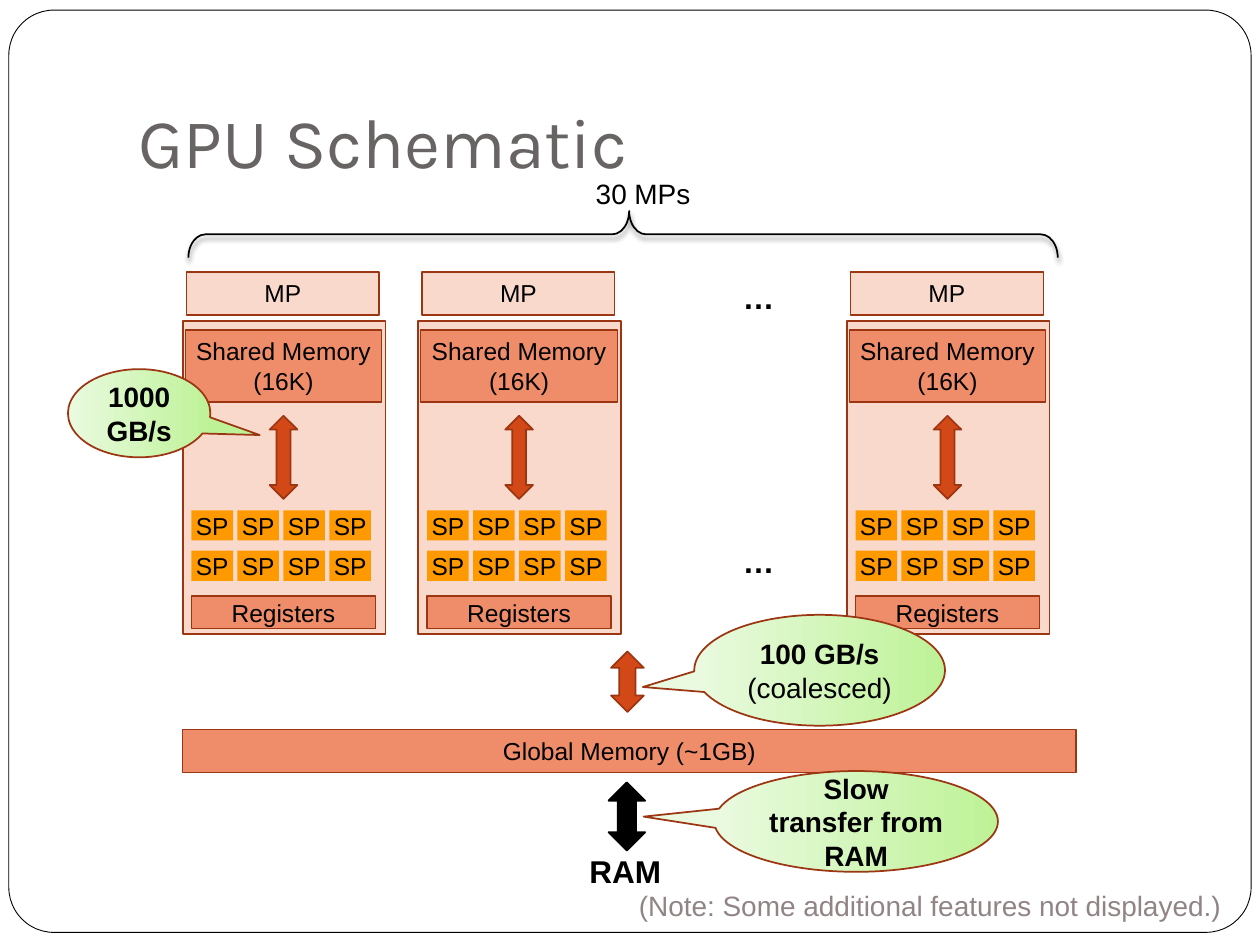
from lxml import etree
from pptx import Presentation
from pptx.dml.color import RGBColor
from pptx.enum.shapes import MSO_SHAPE
from pptx.enum.text import MSO_ANCHOR, PP_ALIGN
from pptx.oxml import parse_xml
from pptx.util import Inches, Pt

RECT = MSO_SHAPE.RECTANGLE
ROUNDED = MSO_SHAPE.ROUNDED_RECTANGLE
ARROW = MSO_SHAPE.UP_DOWN_ARROW
BRACE = MSO_SHAPE.LEFT_BRACE
CALLOUT = MSO_SHAPE.OVAL_CALLOUT
TOP, MIDDLE, BOTTOM = MSO_ANCHOR.TOP, MSO_ANCHOR.MIDDLE, MSO_ANCHOR.BOTTOM
LEFT, CENTER, RIGHT = PP_ALIGN.LEFT, PP_ALIGN.CENTER, PP_ALIGN.RIGHT

BLACK = RGBColor(0x00, 0x00, 0x00)
WHITE = RGBColor(0xFF, 0xFF, 0xFF)
TITLE_GRAY = RGBColor(0x69, 0x64, 0x64)
NOTE_GRAY = RGBColor(0x91, 0x84, 0x85)
PALE = RGBColor(0xFA, 0xD9, 0xCD)
SALMON = RGBColor(0xEF, 0x8C, 0x6A)
ORANGE = RGBColor(0xFF, 0x99, 0x00)
RUST = RGBColor(0xD3, 0x48, 0x17)
BROWN = RGBColor(0x9C, 0x35, 0x11)
GREEN = RGBColor(0xBE, 0xF2, 0x97)
LIGHT_GREEN = RGBColor(0xEA, 0xFA, 0xE0)

prs = Presentation()
prs.slide_width, prs.slide_height = Inches(10), Inches(7.5)
slide = prs.slides.add_slide(prs.slide_layouts[6])


def draw(kind, x, y, w, h, fill=None, line=BROWN, weight=1):
    shape = slide.shapes.add_shape(kind, Inches(x), Inches(y), Inches(w), Inches(h))
    shape.shadow.inherit = False
    if fill is None:
        shape.fill.background()
    else:
        shape.fill.solid()
        shape.fill.fore_color.rgb = fill
    if line is None:
        shape.line.fill.background()
    else:
        shape.line.color.rgb = line
        shape.line.width = Pt(weight)
    return shape


def write(shape, lines, size=14, color=BLACK, font="Arial", bold=False,
          align=CENTER, anchor=TOP, side=0.1, top=0.05, bottom=0.05):
    frame = shape.text_frame
    frame.word_wrap = True
    frame.vertical_anchor = anchor
    frame.margin_left = frame.margin_right = Inches(side)
    frame.margin_top, frame.margin_bottom = Inches(top), Inches(bottom)
    for i, text in enumerate(lines):
        paragraph = frame.add_paragraph() if i else frame.paragraphs[0]
        paragraph.alignment = align
        for j, part in enumerate(text.split("\n")):
            if j:
                paragraph.add_line_break()
            run = paragraph.add_run()
            run.text = part
            run.font.name = font
            run.font.size = Pt(size)
            run.font.bold = bold
            run.font.color.rgb = color


slide_frame = draw(ROUNDED, 0.07, 0.08, 9.86, 7.32, WHITE, BLACK, 0.5)
slide_frame.adjustments[0] = 0.049

labels = [
    (1, 0.3, 8.5, 1.25, "GPU Schematic",
     dict(size=40, color=TITLE_GRAY, font="Karla", align=LEFT, anchor=BOTTOM, bottom=0.1)),
    (0.55, 7, 9.24, 0.37, "(Note: Some additional features not displayed.)",
     dict(size=16, color=NOTE_GRAY, align=RIGHT)),
    (5.18, 2.16, 1.68, 0.4, "…", dict(size=18, bold=True)),
    (5.18, 4.25, 1.68, 0.4, "…", dict(size=18, bold=True)),
    (4.63, 1.35, 1.1, 0.37, "30 MPs", dict(size=16, align=LEFT)),
    (4.58, 6.71, 1.38, 0.4, "RAM", dict(size=18, bold=True, align=LEFT)),
]
for x, y, w, h, text, style in labels:
    label = slide.shapes.add_textbox(Inches(x), Inches(y), Inches(w), Inches(h))
    write(label, [text], **style)

for x in (1.45, 3.32, 6.72):
    write(draw(RECT, x + 0.03, 2.16, 1.53, 0.34, PALE, weight=0.75), ["MP"])
    draw(RECT, x, 2.55, 1.61, 2.48, PALE)
    shared_memory = draw(RECT, x + 0.02, 2.62, 1.56, 0.57, SALMON, weight=0.75)
    write(shared_memory, ["Shared Memory", "(16K)"], side=0)
    draw(ARROW, x + 0.69, 3.3, 0.22, 0.66, RUST)
    for y in (4.05, 4.37):
        for column in range(4):
            processor = draw(RECT, x + 0.07 + column * 0.365, y, 0.33, 0.24, ORANGE, None)
            write(processor, ["SP"], anchor=MIDDLE, side=0, top=0, bottom=0)
    write(draw(RECT, x + 0.07, 4.73, 1.46, 0.26, SALMON), ["Registers"], anchor=MIDDLE)

global_memory = draw(RECT, 1.45, 5.79, 7.09, 0.34, SALMON, weight=0.75)
write(global_memory, ["Global Memory (~1GB)"])
draw(ARROW, 4.85, 5.17, 0.26, 0.48, RUST)
draw(ARROW, 4.83, 6.21, 0.29, 0.54, BLACK, BLACK)

mp_brace = draw(BRACE, 4.76, -1.59, 0.37, 6.9, line=BLACK)
mp_brace.rotation = 90
mp_brace.adjustments[0], mp_brace.adjustments[1] = 0.364, 0.493
shadow = parse_xml(
    '<a:outerShdw xmlns:a="http://schemas.openxmlformats.org/drawingml/2006/main" '
    'blurRad="38100" dist="25400" dir="5400000" rotWithShape="0">'
    '<a:srgbClr val="000000"><a:alpha val="50000"/></a:srgbClr></a:outerShdw>')
effects = mp_brace.element.spPr.find(etree.QName(shadow.nsmap["a"], "effectLst"))
effects.append(shadow)

callouts = [
    (5.51, 4.88, 1.99, 0.88, -0.705, 0.151, ["100 GB/s", "(coalesced)"]),
    (0.54, 2.93, 1.13, 0.7, 0.847, 0.248, ["1000\nGB/s"]),
    (5.67, 6.12, 2.25, 0.8, -0.75, -0.048, ["Slow transfer from RAM"]),
]
for x, y, w, h, tip_x, tip_y, lines in callouts:
    callout = draw(CALLOUT, x, y, w, h, LIGHT_GREEN)
    callout.adjustments[0], callout.adjustments[1] = tip_x, tip_y
    callout.fill.gradient()
    callout.fill.gradient_angle = 180
    for stop, color in zip(callout.fill.gradient_stops, (GREEN, LIGHT_GREEN)):
        stop.color.rgb = color
    write(callout, lines, size=16, bold=True, anchor=MIDDLE)
    for paragraph in callout.text_frame.paragraphs[1:]:
        paragraph.runs[0].font.bold = False

prs.save("out.pptx")
